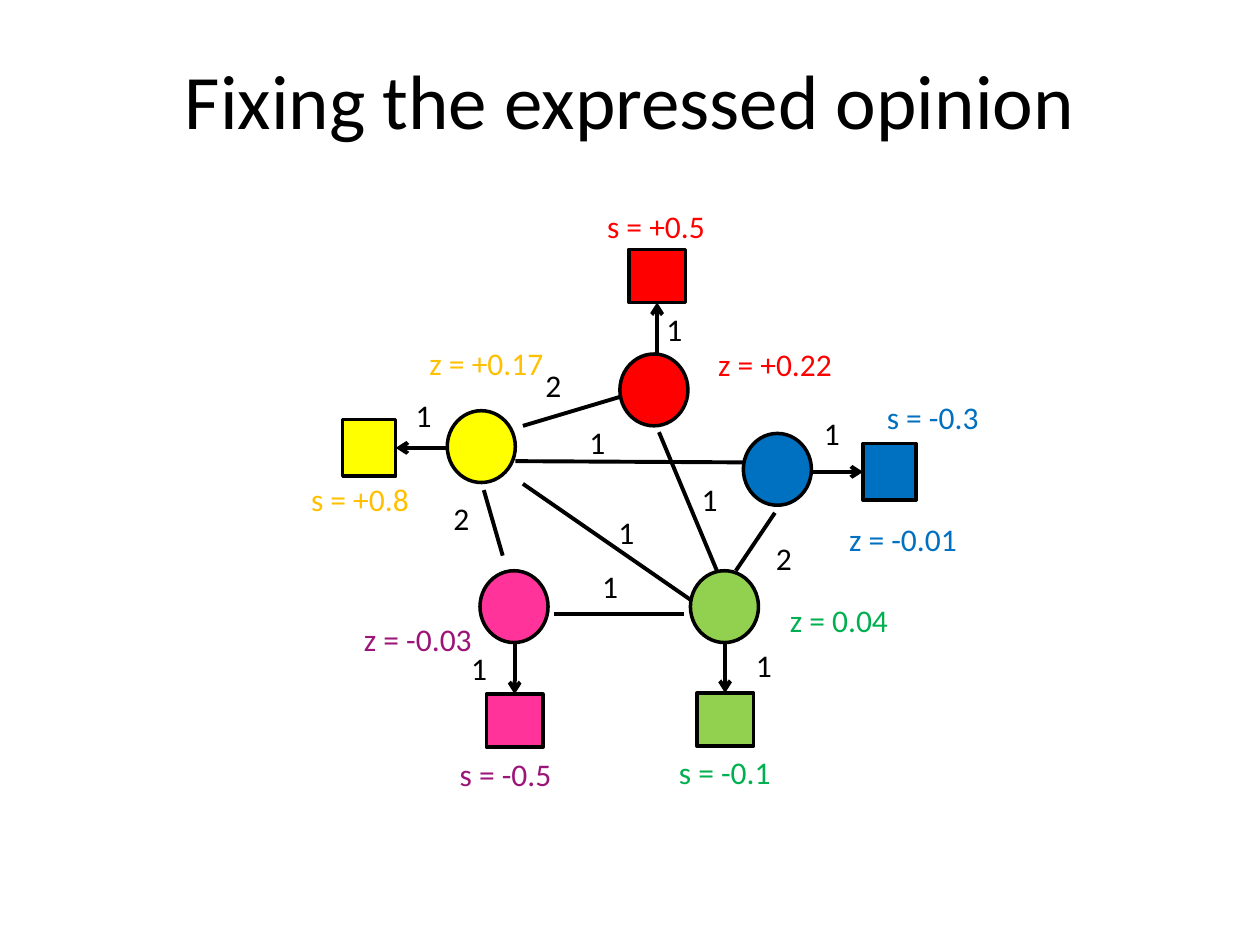
from collections import namedtuple

from lxml.etree import SubElement
from pptx import Presentation
from pptx.dml.color import RGBColor
from pptx.enum.shapes import MSO_CONNECTOR, MSO_SHAPE
from pptx.enum.text import MSO_ANCHOR, MSO_AUTO_SIZE, PP_ALIGN
from pptx.oxml.ns import qn
from pptx.util import Inches, Pt

WIDTH, HEIGHT = Inches(10), Inches(7.5)
COLUMNS, ROWS = 100, 75
FONT = "Calibri"
BLACK = "000000"
CIRCLE_SIZE = (5.4, 5.7)
SQUARE_LONG, SQUARE_SHORT = 4.5, 4.2
TOP, LEFT, BOTTOM, RIGHT = range(4)

Agent = namedtuple(
    "Agent",
    "fill text_color circle square direction weight_at inner inner_at expressed expressed_at",
)
AGENTS = [
    Agent("FF0000", "FF0000", (49.2, 28.1), (49.9, 19.8), TOP, (51.9, 24.1),
          "s = +0.5", (47.2, 15.9, 10), "z = +0.22", (56, 26.9, 11.2)),
    Agent("0070C0", "0070C0", (59, 34.4), (68.5, 35.2), RIGHT, (64.4, 32.4),
          "s = -0.3", (69.4, 31.1, 9.4), "z = -0.01", (66.4, 40.8, 10.7)),
    Agent("92D050", "00B050", (54.8, 45.3), (55.3, 55), BOTTOM, (59, 50.8),
          "s = -0.1", (52.9, 59.3, 9.4), "z = 0.04", (61.7, 47.2, 9.9)),
    Agent("FF3399", "9B1578", (38.1, 45.3), (38.6, 55.1), BOTTOM, (36.4, 51),
          "s = -0.5", (35.5, 59.4, 9.4), "z = -0.03", (27.9, 48.7, 10.7)),
    Agent("FFFF00", "FFC000", (35.5, 32.6), (27.2, 33.3), LEFT, (32, 30.9),
          "s = +0.8", (23.7, 37.6, 9.9), "z = +0.17", (33.1, 26.8, 11.2)),
]

Tie = namedtuple("Tie", "start end weight weight_at")
TIES = [
    Tie((44, 48.7), (54.3, 48.7), "1", (46.8, 44.5)),
    Tie((39.9, 44.1), (38.4, 38.9), "2", (35, 39.1)),
    Tie((41.5, 33.8), (49.2, 31.5), "2", (42.3, 28.6)),
    Tie((40.9, 36.6), (59, 36.7), "1", (45.8, 33.1)),
    Tie((56.9, 45.3), (52.3, 34.3), "1", (54.7, 37.6)),
    Tie((58.4, 45.3), (61.5, 40.7), "2", (60.6, 42.3)),
    Tie((54.8, 47.6), (41.5, 38.4), "1", (48.1, 40.2)),
]


def column(count):
    return round(WIDTH * count / COLUMNS)


def row(count):
    return round(HEIGHT * count / ROWS)


def color(value):
    return RGBColor.from_string(value)


def add_text(paragraph, text, size, text_color):
    run = paragraph.add_run()
    run.text = text
    run.font.name = FONT
    run.font.size = Pt(size)
    run.font.color.rgb = color(text_color)


def set_title(slide, text):
    title = slide.shapes.title
    title.left, title.top = column(5), row(1.6)
    title.width, title.height = column(90), row(12.5)
    title.text_frame.vertical_anchor = MSO_ANCHOR.MIDDLE
    paragraph = title.text_frame.paragraphs[0]
    paragraph.alignment = PP_ALIGN.CENTER
    add_text(paragraph, text, 44, BLACK)


def add_label(slide, text, left, top, width=3.4, text_color=BLACK):
    box = slide.shapes.add_textbox(column(left), row(top), column(width), row(4))
    box.text_frame.word_wrap = False
    box.text_frame.auto_size = MSO_AUTO_SIZE.SHAPE_TO_FIT_TEXT
    add_text(box.text_frame.paragraphs[0], text, 18, text_color)


def add_node(slide, kind, position, size, fill):
    left, top = position
    width, height = size
    shape = slide.shapes.add_shape(kind, column(left), row(top), column(width), row(height))
    shape.shadow.inherit = False
    shape.fill.solid()
    shape.fill.fore_color.rgb = color(fill)
    shape.line.color.rgb = color(BLACK)
    shape.line.width = Pt(2)
    return shape


def add_line(slide, start, end):
    line = slide.shapes.add_connector(MSO_CONNECTOR.STRAIGHT, *start, *end)
    line.line.color.rgb = color(BLACK)
    line.line.width = Pt(2.25)
    SubElement(line.element.spPr, qn("a:effectLst"))
    return line


def add_arrow(slide, circle, square, direction):
    middle_x = square.left + square.width // 2
    middle_y = square.top + square.height // 2
    start = {
        TOP: (middle_x, circle.top),
        LEFT: (circle.left, middle_y),
        BOTTOM: (middle_x, circle.top + circle.height),
        RIGHT: (circle.left + circle.width, middle_y),
    }[direction]
    arrow = add_line(slide, start, (middle_x, middle_y))
    facing_side = (direction + 2) % 4
    arrow.end_connect(square, facing_side)
    SubElement(arrow.line._get_or_add_ln(), qn("a:tailEnd"), type="arrow")


def add_tie(slide, tie):
    start, end = [(column(x), row(y)) for x, y in (tie.start, tie.end)]
    add_line(slide, start, end)
    add_label(slide, tie.weight, *tie.weight_at)


def add_agent(slide, agent):
    square_size = (SQUARE_LONG, SQUARE_SHORT)
    if agent.direction in (LEFT, RIGHT):
        square_size = square_size[::-1]
    circle = add_node(slide, MSO_SHAPE.OVAL, agent.circle, CIRCLE_SIZE, agent.fill)
    square = add_node(slide, MSO_SHAPE.RECTANGLE, agent.square, square_size, agent.fill)
    add_arrow(slide, circle, square, agent.direction)
    add_label(slide, "1", *agent.weight_at)
    add_label(slide, agent.inner, *agent.inner_at, agent.text_color)
    add_label(slide, agent.expressed, *agent.expressed_at, agent.text_color)


def main():
    presentation = Presentation()
    presentation.slide_width, presentation.slide_height = WIDTH, HEIGHT
    slide = presentation.slides.add_slide(presentation.slide_layouts[5])
    set_title(slide, "Fixing the expressed opinion")
    for tie in TIES:
        add_tie(slide, tie)
    for agent in AGENTS:
        add_agent(slide, agent)
    presentation.save("out.pptx")


if __name__ == "__main__":
    main()
